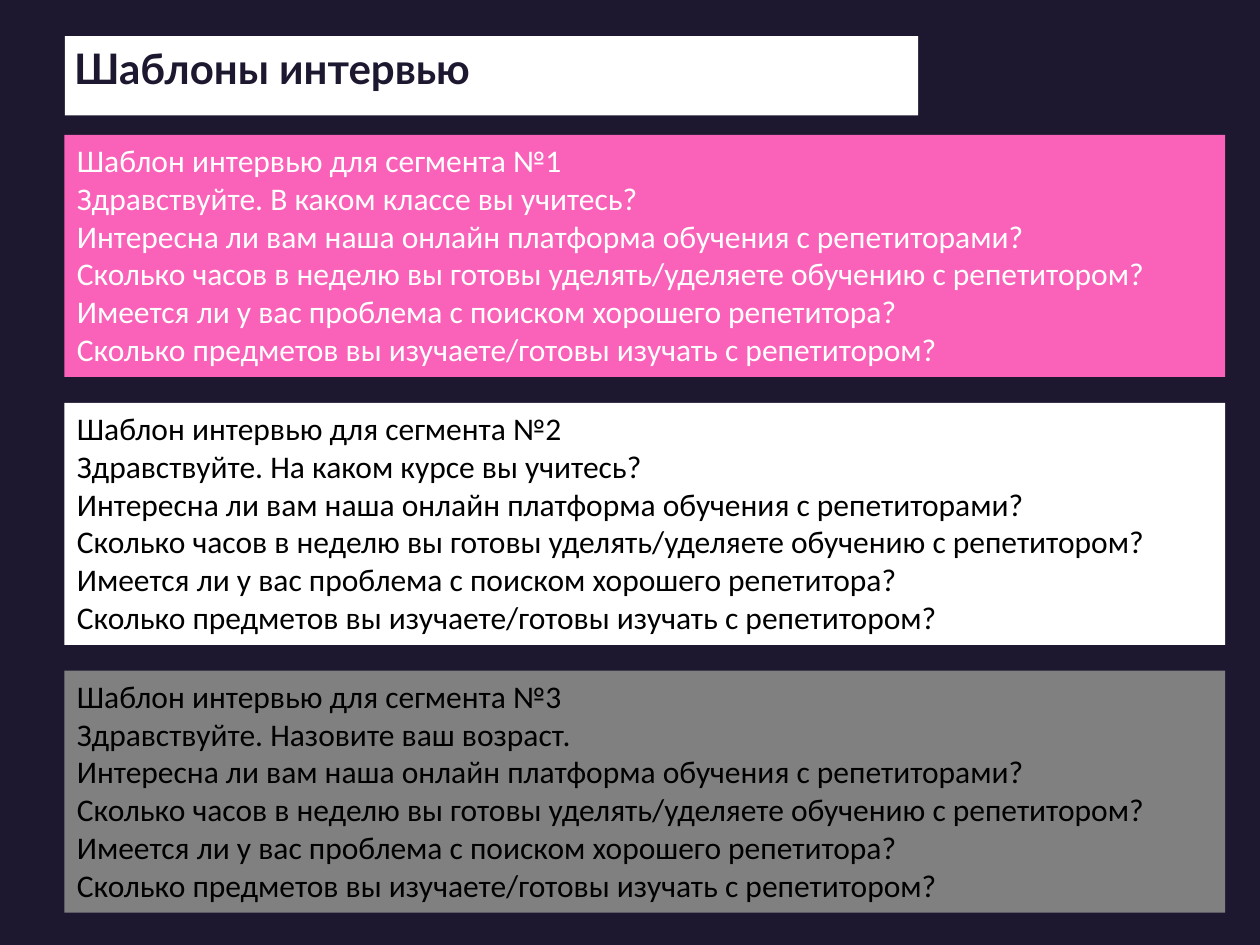
from pptx import Presentation
from pptx.dml.color import RGBColor
from pptx.enum.shapes import MSO_SHAPE
from pptx.enum.text import MSO_ANCHOR, MSO_AUTO_SIZE, PP_ALIGN
from pptx.util import Cm, Pt

RECT = MSO_SHAPE.RECTANGLE
TOP = MSO_ANCHOR.TOP
GROW = MSO_AUTO_SIZE.SHAPE_TO_FIT_TEXT
LEFT = PP_ALIGN.LEFT

DARK, WHITE, BLACK, PINK, GRAY = "1D1830", "FFFFFF", "000000", "FA62B9", "808080"
TITLE_FONT = {"name": "Lato", "size": Pt(24), "bold": True}
BODY_FONT = {"name": "Calibri", "size": Pt(18)}

COMMON_QUESTIONS = [
    "Интересна ли вам наша онлайн платформа обучения с репетиторами?",
    "Сколько часов в неделю вы готовы уделять/уделяете обучению с репетитором?",
    "Имеется ли у вас проблема с поиском хорошего репетитора?",
    "Сколько предметов вы изучаете/готовы изучать с репетитором?",
]
SEGMENTS = [
    ("Здравствуйте. В каком классе вы учитесь?", PINK, WHITE),
    ("Здравствуйте. На каком курсе вы учитесь?", WHITE, BLACK),
    ("Здравствуйте. Назовите ваш возраст.", GRAY, BLACK),
]


def paint(fill, color):
    """Apply a solid hex colour to a fill."""
    fill.solid()
    fill.fore_color.rgb = RGBColor.from_string(color)


def add_box(s, x, y, w, h, color):
    """Add a plain filled rectangle, measured in centimetres."""
    sp = s.shapes.add_shape(RECT, Cm(x), Cm(y), Cm(w), Cm(h))
    sp.shadow.inherit = False
    sp.line.fill.background()
    paint(sp.fill, color)
    return sp


def write(tf, lines, font, color, wrap):
    """Fill a text frame with one left-aligned paragraph per line."""
    tf.word_wrap = wrap
    tf.auto_size = GROW
    tf.vertical_anchor = TOP
    for i, line in enumerate(lines):
        p = tf.add_paragraph() if i else tf.paragraphs[0]
        p.alignment = LEFT
        r = p.add_run()
        r.text = line
        for name, value in font.items():
            setattr(r.font, name, value)
        paint(r.font.fill, color)


def add_title(s, x, y, w, h):
    """Place the title on a white bar filling the given box."""
    bar = add_box(s, x, y, w, h, WHITE)
    title = s.shapes.title
    bar.element.addnext(title.element)
    title.left, title.top, title.width, title.height = Cm(x - 0.07), Cm(y), Cm(8.69), Cm(1.27)
    write(title.text_frame, ["Шаблоны интервью"], TITLE_FONT, DARK, False)


def add_panels(s, x, y, w, h, gap):
    """Stack one interview panel per segment, starting at the given box."""
    for i, (greeting, color, text_color) in enumerate(SEGMENTS):
        sp = add_box(s, x, y + i * (h + gap), w, h, color)
        lines = [f"Шаблон интервью для сегмента №{i + 1}", greeting, *COMMON_QUESTIONS]
        write(sp.text_frame, lines, BODY_FONT, text_color, True)


def main():
    """Build the interview templates slide."""
    prs = Presentation()
    prs.slide_width, prs.slide_height = Cm(25.4), Cm(19.05)
    s = prs.slides.add_slide(prs.slide_layouts[5])
    paint(s.background.fill, DARK)
    add_panels(s, 1.3, 2.72, 23.4, 4.88, 0.52)
    add_title(s, 1.31, 0.73, 17.2, 1.6)
    prs.save("out.pptx")


if __name__ == "__main__":
    main()
